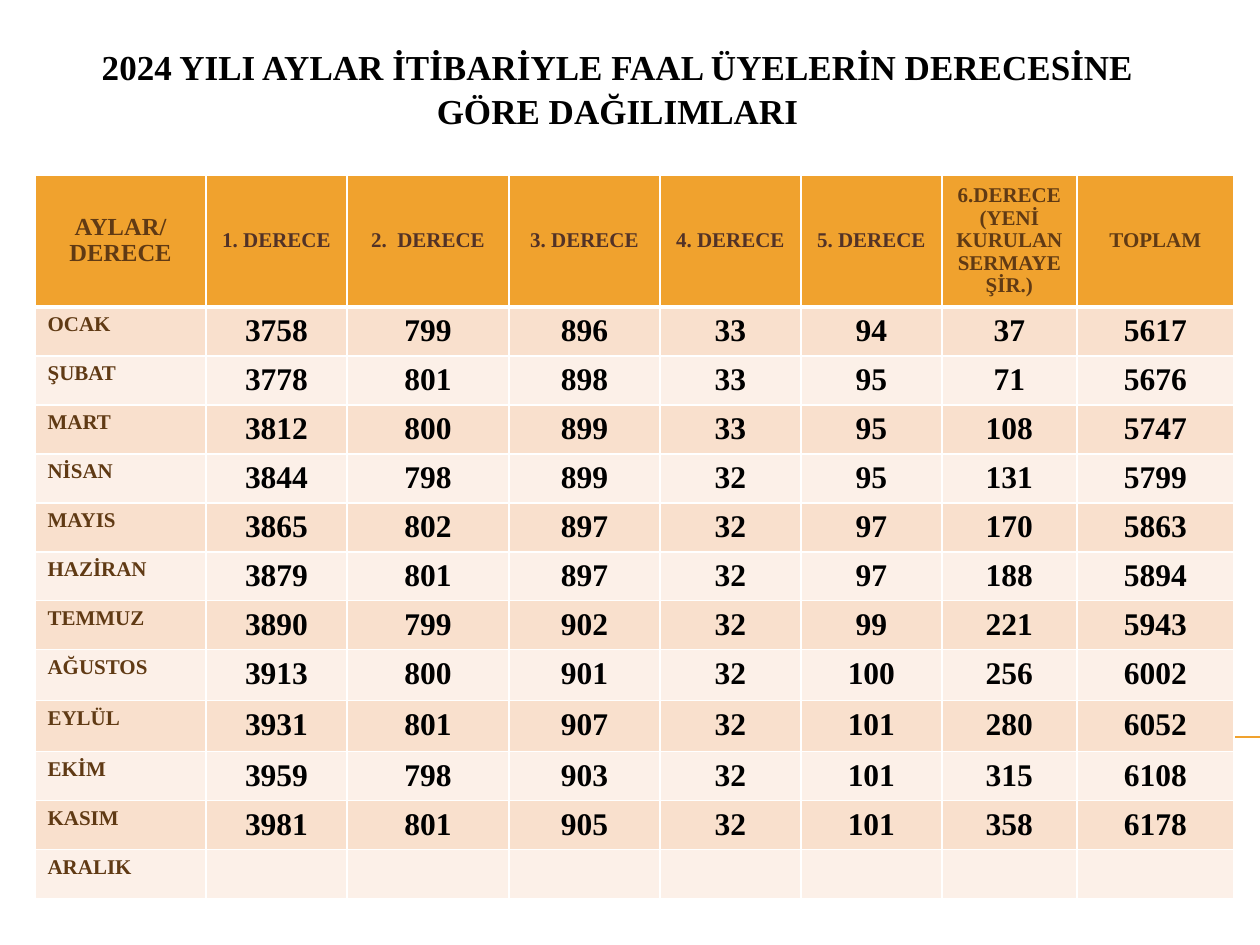
import pptx
import pptx.util
import pptx.dml.color
import pptx.enum.shapes
import pptx.enum.text
import pptx.oxml.ns
from lxml import etree

# Content
TITLE = "2024 YILI AYLAR İTİBARİYLE FAAL ÜYELERİN DERECESİNE GÖRE DAĞILIMLARI"
HEADERS = ["AYLAR/ DERECE", "1. DERECE", "2.  DERECE", "3. DERECE", "4. DERECE",
           "5. DERECE", "6.DERECE (YENİ KURULAN SERMAYE ŞİR.)", "TOPLAM"]
MONTHS = [
    ("OCAK", 3758, 799, 896, 33, 94, 37, 5617),
    ("ŞUBAT", 3778, 801, 898, 33, 95, 71, 5676),
    ("MART", 3812, 800, 899, 33, 95, 108, 5747),
    ("NİSAN", 3844, 798, 899, 32, 95, 131, 5799),
    ("MAYIS", 3865, 802, 897, 32, 97, 170, 5863),
    ("HAZİRAN", 3879, 801, 897, 32, 97, 188, 5894),
    ("TEMMUZ", 3890, 799, 902, 32, 99, 221, 5943),
    ("AĞUSTOS", 3913, 800, 901, 32, 100, 256, 6002),
    ("EYLÜL", 3931, 801, 907, 32, 101, 280, 6052),
    ("EKİM", 3959, 798, 903, 32, 101, 315, 6108),
    ("KASIM", 3981, 801, 905, 32, 101, 358, 6178),
    ("ARALIK", "", "", "", "", "", "", ""),
]
COLORS = {"orange": "F0A22E", "odd": "F9E0CD", "even": "FCF0E8", "white": "FFFFFF",
          "brown": "603A14", "dark": "523227", "black": "000000"}
FONT = "Times New Roman"

# Layout in px
COL_W = [171, 141, 162, 151, 141, 141, 135, 157]
HEADER_H, ROW_H, TALL_H = 132, 49, 51
TALL_MONTHS = {"AĞUSTOS", "EYLÜL"}
ROW_HS = [HEADER_H] + [TALL_H if m[0] in TALL_MONTHS else ROW_H for m in MONTHS]
ALIGN = pptx.enum.text.PP_ALIGN
ANCHOR = pptx.enum.text.MSO_ANCHOR


def px(n):
    return pptx.util.Emu(round(n * 914400 / 126))


def rgb(name):
    return pptx.dml.color.RGBColor.from_string(COLORS[name])


def write(tf, text, size=12, color="brown", align=ALIGN.CENTER, spacing=None):
    p = tf.paragraphs[0]
    p.alignment = align
    p.line_spacing = spacing
    if text == "":
        p._p.get_or_add_endParaRPr().set("sz", str(size * 100))
        return
    r = p.add_run()
    r.text = str(text)
    r.font.name, r.font.size, r.font.bold = FONT, pptx.util.Pt(size), True
    r.font.color.rgb = rgb(color)


def style_cell(cell, fill, top=1, bottom=1):
    pr = cell._tc.get_or_add_tcPr()
    for side, width in (("L", 1), ("R", 1), ("T", top), ("B", bottom)):
        ln = etree.SubElement(pr, pptx.oxml.ns.qn(f"a:ln{side}"), w=str(pptx.util.Pt(width)))
        solid = etree.SubElement(ln, pptx.oxml.ns.qn("a:solidFill"))
        etree.SubElement(solid, pptx.oxml.ns.qn("a:srgbClr"), val=COLORS["white"])
    cell.fill.solid()
    cell.fill.fore_color.rgb = rgb(fill)


def main():
    prs = pptx.Presentation()
    prs.slide_width, prs.slide_height = px(1260), px(945)
    s = prs.slides.add_slide(prs.slide_layouts[5])

    # Title
    title = s.shapes.title
    title.left, title.top, title.width, title.height = px(35), px(37), px(1165), px(79)
    tf = title.text_frame
    tf.word_wrap = True
    tf.auto_size = pptx.enum.text.MSO_AUTO_SIZE.NONE
    tf.vertical_anchor = ANCHOR.TOP
    write(tf, TITLE, size=20, color="black", spacing=1.05)

    # Rule behind the table
    rule = s.shapes.add_connector(pptx.enum.shapes.MSO_CONNECTOR.STRAIGHT,
                                  px(71), px(737), px(1260), px(737))
    rule.line.color.rgb = rgb("orange")
    rule.line.width = pptx.util.Pt(0.75)
    etree.SubElement(rule._element.spPr, pptx.oxml.ns.qn("a:effectLst"))

    # Table grid
    table = s.shapes.add_table(len(ROW_HS), len(COL_W), px(35), px(175),
                               px(sum(COL_W)), px(sum(ROW_HS))).table
    for col, w in zip(table.columns, COL_W):
        col.width = px(w)
    for row, h in zip(table.rows, ROW_HS):
        row.height = px(h)

    # Header row
    for c, text in enumerate(HEADERS):
        cell = table.cell(0, c)
        style_cell(cell, "orange", bottom=3)
        cell.vertical_anchor = ANCHOR.MIDDLE
        write(cell.text_frame, text, size=12 if c else 14,
              color="dark" if 1 <= c <= 5 else "brown", spacing=0.96)

    # Month rows
    for i, month in enumerate(MONTHS, 1):
        for c, value in enumerate(month):
            cell = table.cell(i, c)
            style_cell(cell, "odd" if i % 2 else "even", top=3 if i == 1 else 1)
            if c == 0:
                write(cell.text_frame, value, align=ALIGN.LEFT)
            else:
                write(cell.text_frame, value, size=18 if value else 12, color="black")

    prs.save("out.pptx")


if __name__ == "__main__":
    main()
